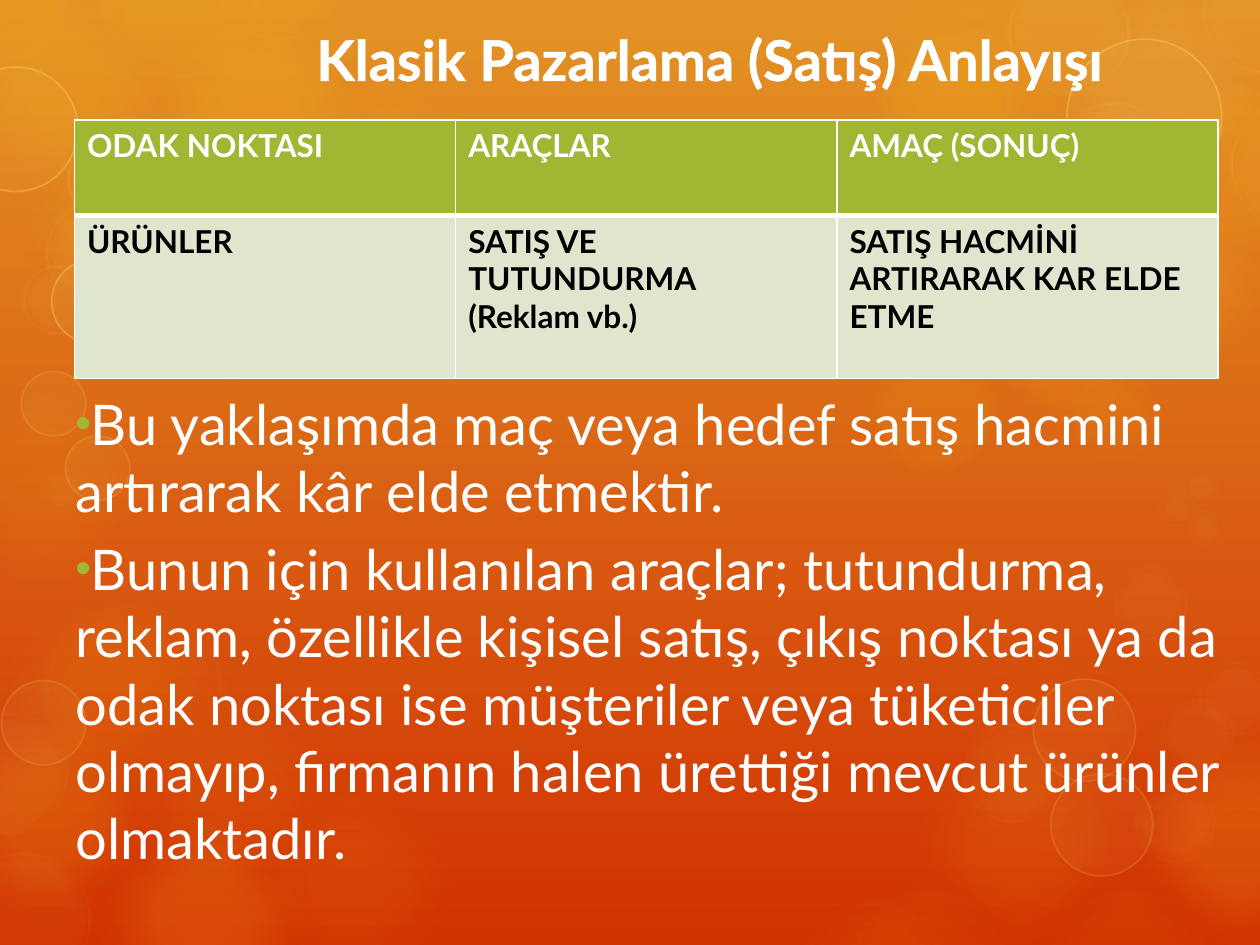
from collections import namedtuple

from lxml.etree import SubElement
from pptx import Presentation
from pptx.dml.color import RGBColor
from pptx.enum.shapes import MSO_SHAPE
from pptx.enum.text import MSO_ANCHOR, MSO_AUTO_SIZE, PP_ALIGN
from pptx.oxml import parse_xml
from pptx.oxml.ns import nsdecls, qn
from pptx.util import Cm, Pt

FONT = "Lato"
WHITE = RGBColor(0xFF, 0xFF, 0xFF)
BLACK = RGBColor(0x00, 0x00, 0x00)
ORANGE = RGBColor(0xE3, 0x93, 0x25)
RED = RGBColor(0xD1, 0x32, 0x02)
AMBER = RGBColor(0xFD, 0xC6, 0x1B)
YELLOW = RGBColor(0xFF, 0xE2, 0x81)
CREAM = RGBColor(0xFE, 0xEB, 0xAE)
GREEN = RGBColor(0xA1, 0xB6, 0x33)
PALE_GREEN = RGBColor(0xE0, 0xE5, 0xCE)

# Opacities are percentages; soft edges and line widths are points.
BubbleStyle = namedtuple("BubbleStyle", "fill opacity soft_edge line line_width line_opacity",
                         defaults=(None, 0, 0))


def write_text(text_frame, paragraphs, size, color, bold=False, align=PP_ALIGN.LEFT):
    for index, text in enumerate(paragraphs):
        paragraph = text_frame.paragraphs[0] if index == 0 else text_frame.add_paragraph()
        paragraph.alignment = align
        run = paragraph.add_run()
        run.text = text
        run.font.name = FONT
        run.font.size = Pt(size)
        run.font.bold = bold
        run.font.color.rgb = color


def add_bubble(left, top, diameter, style):
    """Draw a translucent circle, placed in centimetres."""
    bubble = slide.shapes.add_shape(
        MSO_SHAPE.OVAL, Cm(left), Cm(top), Cm(diameter), Cm(diameter))
    bubble.shadow.inherit = False
    bubble.fill.solid()
    bubble.fill.fore_color.rgb = style.fill
    if style.line:
        bubble.line.color.rgb = style.line
        bubble.line.width = Pt(style.line_width)
    else:
        bubble.line.fill.background()
    properties = bubble.element.spPr
    opacities = (style.opacity, style.line_opacity)
    for color_element, percent in zip(properties.iter(qn("a:srgbClr")), opacities):
        SubElement(color_element, qn("a:alpha"), val=str(percent * 1000))
    if style.soft_edge:
        SubElement(properties.find(qn("a:effectLst")), qn("a:softEdge"),
                   rad=str(Pt(style.soft_edge)))


presentation = Presentation()
presentation.slide_width, presentation.slide_height = Cm(25.4), Cm(19.05)
slide = presentation.slides.add_slide(presentation.slide_layouts[5])

background = slide.background.fill
background.gradient()
background.gradient_angle = 270
for stop, color in zip(background.gradient_stops, (ORANGE, RED)):
    stop.color.rgb = color

# Large blurred bubbles share one size: opacity -> (left, top)
BLUR_DIAMETER = 5.31
blurs = {
    5: [(18.52, 12.12)],
    8: [(-0.66, 11.23), (1.96, 13.31), (4.39, 15.14), (-1.75, 7.16)],
    10: [(1.45, 3.05), (5.21, 0.79), (17, -0.74), (17.93, 14.27)],
    14: [(-1.42, -0.81)],
    15: [(0, 1.83), (20.83, 3.05), (17, 2.18)],
    16: [(1.45, 15.93), (22.38, 14.27), (-1.75, 13.74)],
    20: [(2.57, -0.46)],
}
for opacity, places in blurs.items():
    for left, top in places:
        add_bubble(left, top, BLUR_DIAMETER, BubbleStyle(AMBER, opacity, 25))
add_bubble(20.83, -0.81, BLUR_DIAMETER, BubbleStyle(YELLOW, 10, 25))
add_bubble(17.15, 6.65, 3.38, BubbleStyle(AMBER, 10, 12))

# Outlined bubbles: diameter -> (left, top). Below UPPER_LIMIT they use a fainter style.
UPPER_LIMIT = 7.45
glows = {
    2: [(21.51, 7.39)],
    2.9: [(17.63, 0.58), (20.04, 5.69), (4.17, -1.9), (-1.45, -1.48)],
    3.15: [(16.05, 18.03)],
    3.4: [(23.32, 1.65), (19.1, 4.04), (1.9, -1.65), (17.02, 17.8), (21.05, 17.8)],
    3.89: [(0.76, 12.01)],
}
rings = {
    1.3: [(0.43, 7.49), (1.32, 8.79)],
    1.7: [(1.04, 5.23), (20.75, 3.68), (0.03, 13.72)],
    2.06: [(21.18, 15.6), (20.83, 13.69)],
    2.51: [(-0.94, 1.35)],
    3.12: [(21.51, 0.79)],
}
halos = {
    0.84: [(23.8, 9.4), (23.32, 9.83), (23.9, 10.24)],
    0.99: [(0.76, 9.4)],
    1.45: [(0.43, 5.33)],
    1.55: [(22.43, 11.38), (23.37, 14.05), (24.13, 13.31)],
    1.68: [(22.86, 15.75)],
    2.06: [(19.38, 14.55)],
    2.16: [(0.89, 4.04)],
    2.52: [(1.32, 2.34), (20.29, -0.61), (24.21, -1.02), (-1.12, 14.33)],
    2.75: [(24.77, 1.96), (21.08, 2.03), (-0.89, 17.15)],
}
glow_style = BubbleStyle(AMBER, 10, 12, CREAM, 14, 6)
ring_style = BubbleStyle(YELLOW, 5, 0, YELLOW, 1, 30)
halo_style = BubbleStyle(YELLOW, 5, 5, YELLOW, 5, 30)
for bubbles, upper_style, lower_style in [
    (glows, glow_style, glow_style._replace(opacity=6, line_opacity=4)),
    (rings, ring_style, ring_style._replace(line_opacity=15)),
    (halos, halo_style, halo_style._replace(line_opacity=15)),
]:
    for diameter, places in bubbles.items():
        for left, top in places:
            style = upper_style if top < UPPER_LIMIT else lower_style
            add_bubble(left, top, diameter, style)

title = slide.shapes.title
title.left, title.top, title.width, title.height = Cm(2.9), Cm(0.33), Cm(22.83), Cm(1.7)
title_frame = title.text_frame
title_frame.auto_size = MSO_AUTO_SIZE.NONE
title_frame.vertical_anchor = MSO_ANCHOR.MIDDLE
write_text(title_frame, ["Klasik Pazarlama (Satış) Anlayışı"], 32, WHITE,
           bold=True, align=PP_ALIGN.CENTER)
WHITE_FILL = f'<a:solidFill><a:srgbClr val="{WHITE}"/></a:solidFill>'
title_outline = parse_xml(f'<a:ln {nsdecls("a")} w="{Pt(1.45)}">{WHITE_FILL}</a:ln>')
title_frame.paragraphs[0].runs[0]._r.get_or_add_rPr().insert(0, title_outline)
title.element.getparent().append(title.element)  # in front of the bubbles

header_row = [["ODAK NOKTASI"], ["ARAÇLAR"], ["AMAÇ (SONUÇ)"]]
content_row = [
    ["ÜRÜNLER"],
    ["SATIŞ VE TUTUNDURMA", "(Reklam vb.)"],
    ["SATIŞ HACMİNİ ARTIRARAK KAR ELDE ETME"],
]
# Each row: cell texts, height, fill, text colour, border widths in points
table_rows = [
    (header_row, 1.93, GREEN, WHITE, {"lnL": 1, "lnR": 1, "lnT": 1, "lnB": 3}),
    (content_row, 3.28, PALE_GREEN, BLACK, {"lnL": 1, "lnR": 1, "lnT": 3, "lnB": 1}),
]
table = slide.shapes.add_table(2, 3, Cm(1.5), Cm(2.42), Cm(23.06), Cm(5.21)).table
for row, (texts, height, fill, color, borders) in zip(table.rows, table_rows):
    row.height = Cm(height)
    for cell, paragraphs in zip(row.cells, texts):
        write_text(cell.text_frame, paragraphs, 18, color, bold=True)
        cell_properties = cell._tc.get_or_add_tcPr()
        for side, width in borders.items():
            cell_properties.append(parse_xml(
                f'<a:{side} {nsdecls("a")} w="{Pt(width)}">{WHITE_FILL}</a:{side}>'))
        cell.fill.solid()
        cell.fill.fore_color.rgb = fill

body = slide.shapes.add_textbox(Cm(1.09), Cm(7.72), Cm(23.8), Cm(10.8)).text_frame
body.word_wrap = True
write_text(body, [
    "Bu yaklaşımda maç veya hedef satış hacmini artırarak kâr elde etmektir.",
    "Bunun için kullanılan araçlar; tutundurma, reklam, özellikle kişisel satış, "
    "çıkış noktası ya da odak noktası ise müşteriler veya tüketiciler olmayıp, "
    "firmanın halen ürettiği mevcut ürünler olmaktadır.",
], 32, WHITE)
for paragraph in body.paragraphs:
    paragraph.space_before = Pt(6.4)
    properties = paragraph._p.get_or_add_pPr()
    properties.set("marL", str(Cm(0.18)))
    properties.set("indent", "0")
    bullet_color = SubElement(properties, qn("a:buClr"))
    SubElement(bullet_color, qn("a:srgbClr"), val=str(GREEN))
    SubElement(properties, qn("a:buSzPct"), val="80000")
    SubElement(properties, qn("a:buFont"), typeface="Arial")
    SubElement(properties, qn("a:buChar"), char="•")

presentation.save("out.pptx")
